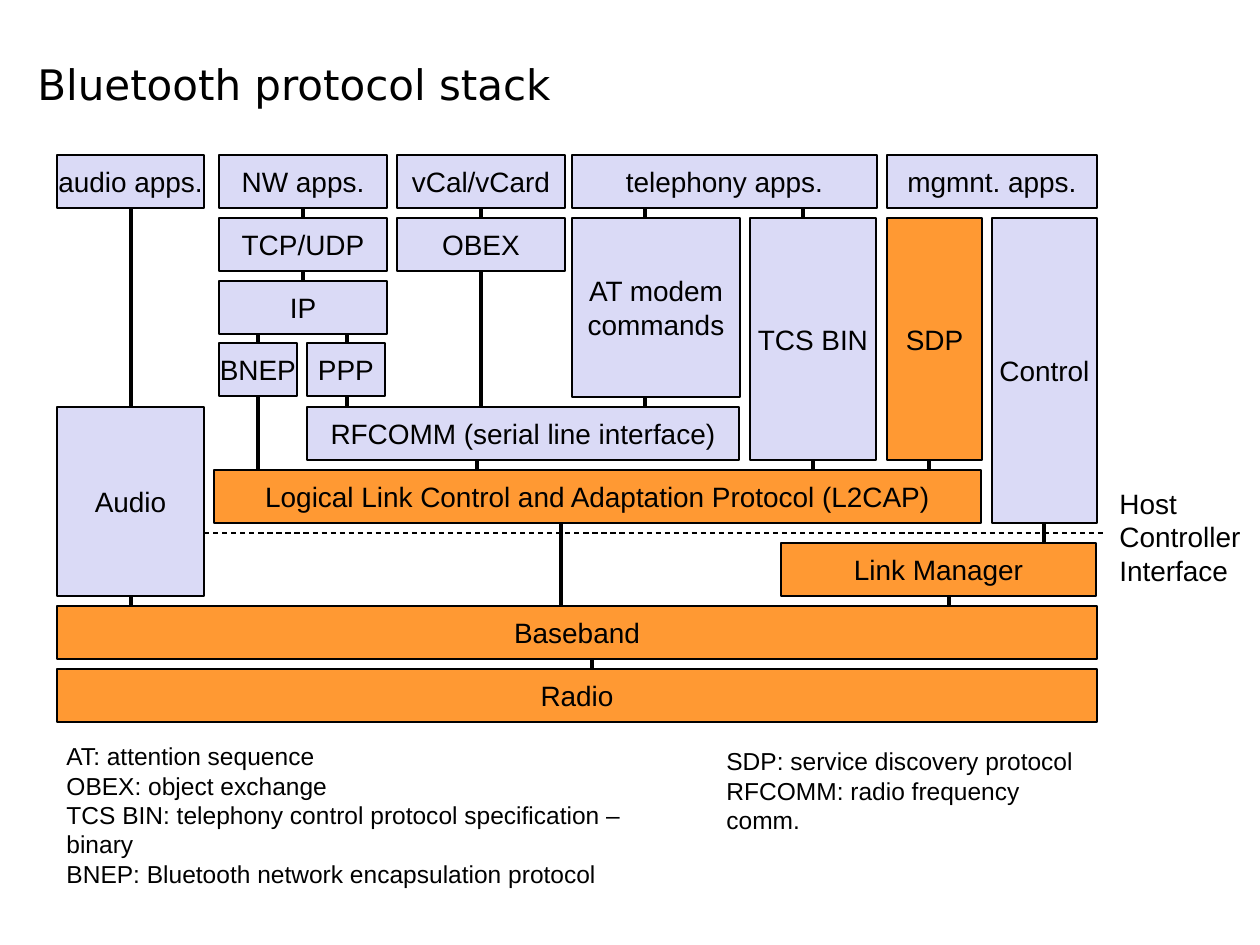
import pptx
import pptx.util
import pptx.dml.color
import pptx.enum.dml
import pptx.enum.shapes
import pptx.enum.text
from dataclasses import dataclass
from lxml import etree

PX = 914400 / 126
ROW, PITCH, BAR = 155, 63, 53
ALIGN = pptx.enum.text.PP_ALIGN
ANCHOR = pptx.enum.text.MSO_ANCHOR


def px(*values):
    return [pptx.util.Emu(round(v * PX)) for v in values]


def rgb(value):
    return pptx.dml.color.RGBColor.from_string(value)


@dataclass(frozen=True)
class Theme:
    ink: str = "000000"
    host: str = "DADAF6"
    core: str = "FF9933"
    font: str = "Arial"
    title_font: str = "DejaVu Sans"
    title: int = 24
    label: int = 16
    note: int = 14
    thin: float = 0.75
    thick: float = 2.25


def write(tf, text, size, color, font, align=ALIGN.LEFT, anchor=ANCHOR.TOP, wrap=True):
    tf.word_wrap = wrap
    tf.vertical_anchor = anchor
    for i, line in enumerate(text.split("\n")):
        p = tf.paragraphs[0] if i == 0 else tf.add_paragraph()
        p.alignment = align
        r = p.add_run()
        r.text = line
        r.font.size = pptx.util.Pt(size)
        r.font.name = font
        r.font.color.rgb = rgb(color)


class Slide:
    def __init__(self, s, theme):
        self.s = s
        self.theme = theme

    def box(self, text, x, y, w, h=BAR, core=False):
        t = self.theme
        sp = self.s.shapes.add_shape(pptx.enum.shapes.MSO_SHAPE.RECTANGLE, *px(x, y, w, h))
        sp.shadow.inherit = False
        sp.fill.solid()
        sp.fill.fore_color.rgb = rgb(t.core if core else t.host)
        sp.line.color.rgb = rgb(t.ink)
        sp.line.width = pptx.util.Pt(t.thin)
        write(sp.text_frame, text, t.label, t.ink, t.font,
              align=ALIGN.CENTER, anchor=ANCHOR.MIDDLE, wrap=False)

    def line(self, x1, y1, x2, y2, width, dash=False):
        sp = self.s.shapes.add_connector(pptx.enum.shapes.MSO_CONNECTOR.STRAIGHT, *px(x1, y1, x2, y2))
        sp.line.color.rgb = rgb(self.theme.ink)
        sp.line.width = pptx.util.Pt(width)
        if dash:
            sp.line.dash_style = pptx.enum.dml.MSO_LINE.DASH
        props = sp.line._get_or_add_ln().getparent()
        etree.SubElement(props, pptx.oxml.ns.qn("a:effectLst"))

    def text(self, text, x, y, w, h, size, font=None, **layout):
        sp = self.s.shapes.add_textbox(*px(x, y, w, h))
        write(sp.text_frame, text, size, self.theme.ink, font or self.theme.font, **layout)


def row(i):
    return ROW + i * PITCH


LINKS = {
    (208, 218): [303, 481, 645, 803],
    (208, 407): [131],
    (271, 281): [303],
    (271, 407): [481],
    (333, 343): [347],
    (323, 353): [258],
    (392, 407): [347],
    (392, 470): [258],
    (397, 407): [645],
    (460, 470): [477, 813, 929],
    (523, 543): [1044],
    (523, 606): [561],
    (596, 606): [131, 949],
    (659, 669): [592],
}

HOST_BOXES = [
    ("audio apps.", 57, row(0), 147),
    ("NW apps.", 219, row(0), 168),
    ("vCal/vCard", 397, row(0), 168),
    ("telephony apps.", 572, row(0), 305),
    ("mgmnt. apps.", 887, row(0), 210),
    ("TCP/UDP", 219, row(1), 168),
    ("OBEX", 397, row(1), 168),
    ("AT modem\ncommands", 572, row(1), 168, 179),
    ("TCS BIN", 750, row(1), 126, 242),
    ("Control", 992, row(1), 105, 305),
    ("IP", 219, row(2), 168),
    ("BNEP", 219, 343, 78),
    ("PPP", 307, 343, 78),
    ("RFCOMM (serial line interface)", 307, row(4), 432),
    ("Audio", 57, row(4), 147, 189),
]

CORE_BOXES = [
    ("SDP", 887, row(1), 95, 242),
    ("Logical Link Control and Adaptation Protocol (L2CAP)", 214, row(5), 767),
    ("Link Manager", 781, 543, 315),
    ("Baseband", 57, 606, 1040),
    ("Radio", 57, 669, 1040),
]

LEFT_NOTES = """AT: attention sequence
OBEX: object exchange
TCS BIN: telephony control protocol specification – binary
BNEP: Bluetooth network encapsulation protocol"""
RIGHT_NOTES = """SDP: service discovery protocol
RFCOMM: radio frequency comm."""


def main():
    prs = pptx.Presentation()
    prs.slide_width, prs.slide_height = px(1260, 945)
    theme = Theme()
    slide = Slide(prs.slides.add_slide(prs.slide_layouts[6]), theme)

    slide.text("Bluetooth protocol stack", 25, 0, 833, 115, theme.title,
               font=theme.title_font, anchor=ANCHOR.BOTTOM)
    slide.line(141, 533, 1107, 533, theme.thin, dash=True)
    for (top, bottom), columns in LINKS.items():
        for x in columns:
            slide.line(x, bottom, x, top, theme.thick)
    for box in HOST_BOXES:
        slide.box(*box)
    for box in CORE_BOXES:
        slide.box(*box, core=True)
    slide.text("Host\nController\nInterface", 1107, 480, 146, 113, theme.label, wrap=False)
    slide.text(LEFT_NOTES, 54, 735, 650, 130, theme.note)
    slide.text(RIGHT_NOTES, 714, 740, 394, 72, theme.note)

    prs.save("out.pptx")


if __name__ == "__main__":
    main()
